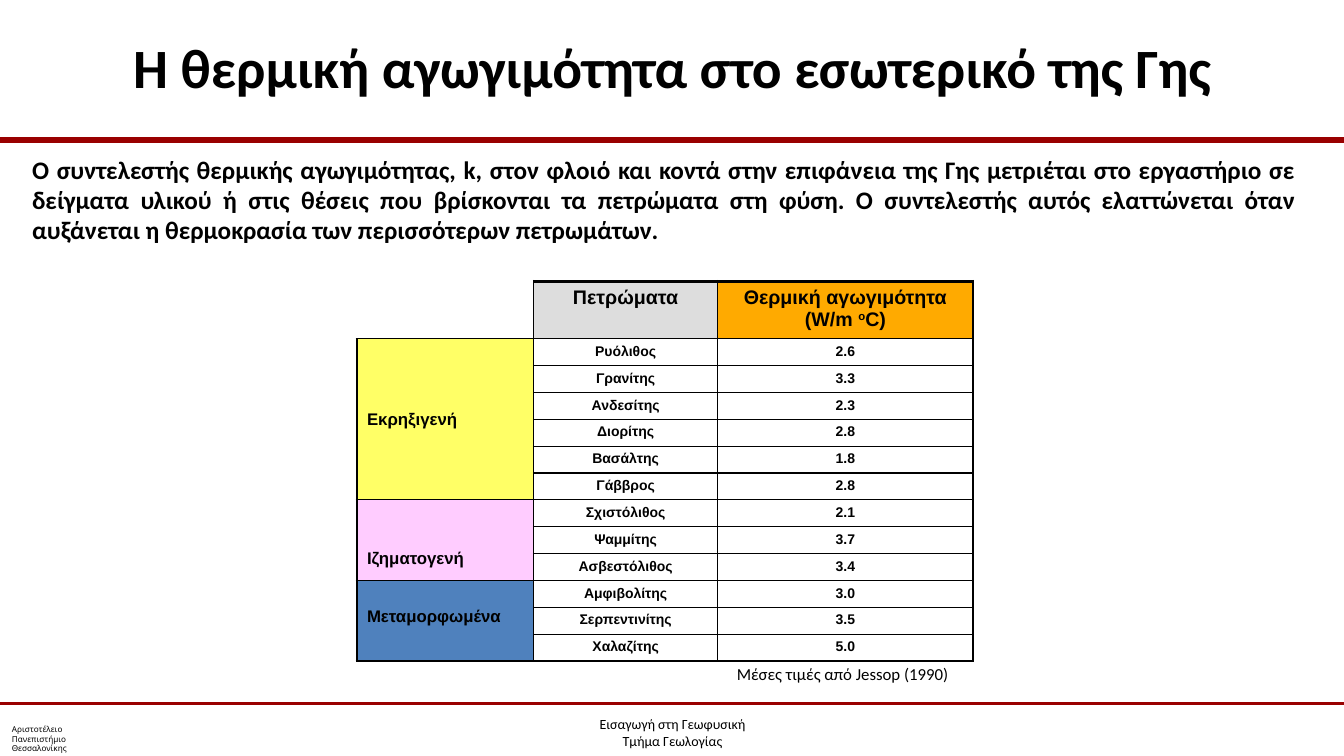
from dataclasses import dataclass

from lxml import etree
from pptx import Presentation
from pptx import util as u
from pptx.dml.color import RGBColor
from pptx.enum import shapes, text
from pptx.oxml import ns

COLORS = {
    "ink": "000000", "rule": "990000", "paper": "FFFFFF",
    "rocks": "DDDDDD", "conductivity": "FFAA00",
    "igneous": "FFFF66", "sedimentary": "FFCCFF", "metamorphic": "4F81BD",
}
THIN, THICK = 1, 2.25
ALIGN, ANCHOR = text.PP_ALIGN, text.MSO_ANCHOR


@dataclass
class RockGroup:
    name: str
    color: str
    anchor: text.MSO_ANCHOR
    bottom_margin: float
    rocks: list[tuple[str, str]]


@dataclass
class Caption:
    lines: list[str]
    box: tuple[float, float, float, float]
    size: float
    font: str = "Calibri"
    bold: bool = False
    align: text.PP_ALIGN = ALIGN.LEFT
    anchor: text.MSO_ANCHOR = ANCHOR.TOP
    vertical_inset: float = 0.05
    first_line_spacing: float = 1.0


GROUPS = [
    RockGroup("Εκρηξιγενή", "igneous", ANCHOR.MIDDLE, 0.05, [
        ("Ρυόλιθος", "2.6"), ("Γρανίτης", "3.3"), ("Ανδεσίτης", "2.3"),
        ("Διορίτης", "2.8"), ("Βασάλτης", "1.8"), ("Γάββρος", "2.8")]),
    RockGroup("Ιζηματογενή", "sedimentary", ANCHOR.BOTTOM, 0.12, [
        ("Σχιστόλιθος", "2.1"), ("Ψαμμίτης", "3.7"), ("Ασβεστόλιθος", "3.4")]),
    RockGroup("Μεταμορφωμένα", "metamorphic", ANCHOR.MIDDLE, 0.14, [
        ("Αμφιβολίτης", "3.0"), ("Σερπεντινίτης", "3.5"), ("Χαλαζίτης", "5.0")]),
]

CAPTIONS = [
    Caption(["Αριστοτέλειο", "Πανεπιστήμιο", "Θεσσαλονίκης"],
            (0.02, 7.16, 1.05, 0.34), 5.8, "League Spartan", anchor=ANCHOR.MIDDLE),
    Caption(["Εισαγωγή στη Γεωφυσική", "Τμήμα Γεωλογίας"],
            (4.57, 6.9, 4.2, 0.6), 10, align=ALIGN.CENTER,
            vertical_inset=0, first_line_spacing=2.2),
    Caption(["Ο συντελεστής θερμικής αγωγιμότητας, k, στον φλοιό και κοντά στην "
             "επιφάνεια της Γης μετριέται στο εργαστήριο σε δείγματα υλικού ή στις "
             "θέσεις που βρίσκονται τα πετρώματα στη φύση. Ο συντελεστής αυτός "
             "ελαττώνεται όταν αυξάνεται η θερμοκρασία των περισσότερων πετρωμάτων."],
            (0.22, 1.48, 12.73, 1.01), 18, bold=True, align=ALIGN.JUSTIFY),
    Caption(["Μέσες τιμές από Jessop (1990)"], (7.21, 6.54, 3.5, 0.3), 12),
]


def rgb(name: str) -> RGBColor:
    return RGBColor.from_string(COLORS[name])


def style_paragraph(paragraph, size: float, font: str, bold: bool, align) -> None:
    paragraph.alignment = align
    for run in paragraph.runs:
        run.font.size = u.Pt(size)
        run.font.name = font
        run.font.bold = bold
        run.font.color.rgb = rgb("ink")


def add_rule(slide, y: float, weight: float) -> None:
    rule = slide.shapes.add_connector(
        shapes.MSO_CONNECTOR.STRAIGHT, 0, u.Inches(y), u.Inches(13.33), u.Inches(y))
    rule.line.color.rgb = rgb("rule")
    rule.line.width = u.Pt(weight)
    etree.SubElement(rule._element.spPr, ns.qn("a:effectLst"))


def add_caption(slide, caption: Caption) -> None:
    frame = slide.shapes.add_textbox(*map(u.Inches, caption.box)).text_frame
    frame.word_wrap = True
    frame.vertical_anchor = caption.anchor
    frame.margin_top = frame.margin_bottom = u.Inches(caption.vertical_inset)
    frame.text = "\n".join(caption.lines)
    for paragraph in frame.paragraphs:
        style_paragraph(paragraph, caption.size, caption.font, caption.bold, caption.align)
    if caption.first_line_spacing != 1:
        frame.paragraphs[0].line_spacing = caption.first_line_spacing


def set_borders(cell, left: float, right: float, top: float, bottom: float) -> None:
    """Draw the four sides in points; a width of 0 hides a side."""
    properties = cell._tc.get_or_add_tcPr()
    for side, width in zip("LRTB", (left, right, top, bottom)):
        line = etree.SubElement(properties, ns.qn(f"a:ln{side}"), w=str(u.Pt(width)))
        if width:
            fill = etree.SubElement(line, ns.qn("a:solidFill"))
            etree.SubElement(fill, ns.qn("a:srgbClr"), val=COLORS["ink"])
        else:
            etree.SubElement(line, ns.qn("a:noFill"))


def fill_cell(cell, words: str, size: float, color: str, align=ALIGN.CENTER) -> None:
    cell.fill.solid()
    cell.fill.fore_color.rgb = rgb(color)
    cell.text_frame.text = words
    style_paragraph(cell.text_frame.paragraphs[0], size, "Arial", True, align)


def add_rock_table(slide) -> None:
    row_count = 1 + sum(len(group.rocks) for group in GROUPS)
    height, header_height = 3.77, 0.57
    table = slide.shapes.add_table(
        row_count, 3, *map(u.Inches, (3.54, 2.79, 6.11, height))).table
    table.first_row = table.horz_banding = False
    for column, width in zip(table.columns, (1.75, 1.83, 2.53)):
        column.width = u.Inches(width)
    for row in table.rows:
        row.height = u.Inches((height - header_height) / (row_count - 1))
    table.rows[0].height = u.Inches(header_height)

    # Thin grid inside a thick frame, open at the empty corner
    for r in range(row_count):
        for c in range(3):
            corner = r == 0 and c == 0
            set_borders(table.cell(r, c),
                        left=0 if corner else THICK if c == 0 else THIN,
                        right=THICK if c == 2 else THIN,
                        top=0 if corner else THICK if r == 0 else THIN,
                        bottom=THICK if r == row_count - 1 else THIN)

    # Header row
    table.cell(0, 0).fill.background()
    fill_cell(table.cell(0, 1), "Πετρώματα", 14, "rocks")
    conductivity = table.cell(0, 2)
    fill_cell(conductivity, "Θερμική αγωγιμότητα (W/m ", 14, "conductivity")
    heading = conductivity.text_frame.paragraphs[0]
    for part in ("o", "C)"):
        heading.add_run().text = part
    style_paragraph(heading, 14, "Arial", True, ALIGN.CENTER)
    heading.runs[1].font._element.set("baseline", "30000")

    # Rock groups
    first = 1
    for group in GROUPS:
        label = table.cell(first, 0)
        label.merge(table.cell(first + len(group.rocks) - 1, 0))
        fill_cell(label, group.name, 12, group.color, ALIGN.LEFT)
        label.vertical_anchor = group.anchor
        label.margin_bottom = u.Inches(group.bottom_margin)
        for r, rock in enumerate(group.rocks, first):
            for c, words in enumerate(rock, 1):
                fill_cell(table.cell(r, c), words, 10, "paper")
        first += len(group.rocks)


def add_title(slide) -> None:
    title = slide.shapes.title
    title.left, title.top, title.width, title.height = map(u.Inches, (0.67, 0.03, 12, 1.25))
    frame = title.text_frame
    frame.text = "Η θερμική αγωγιμότητα στο εσωτερικό της Γης"
    frame.auto_size = text.MSO_AUTO_SIZE.NONE
    frame.vertical_anchor = ANCHOR.MIDDLE
    style_paragraph(frame.paragraphs[0], 39.6, "Calibri", True, ALIGN.CENTER)


def main() -> None:
    deck = Presentation()
    deck.slide_width, deck.slide_height = u.Inches(13.33), u.Inches(7.5)
    slide = deck.slides.add_slide(deck.slide_layouts[5])
    add_title(slide)
    add_rule(slide, 1.39, 4)
    add_rule(slide, 6.98, 2)
    add_rock_table(slide)
    for caption in CAPTIONS:
        add_caption(slide, caption)
    deck.save("out.pptx")


if __name__ == "__main__":
    main()
